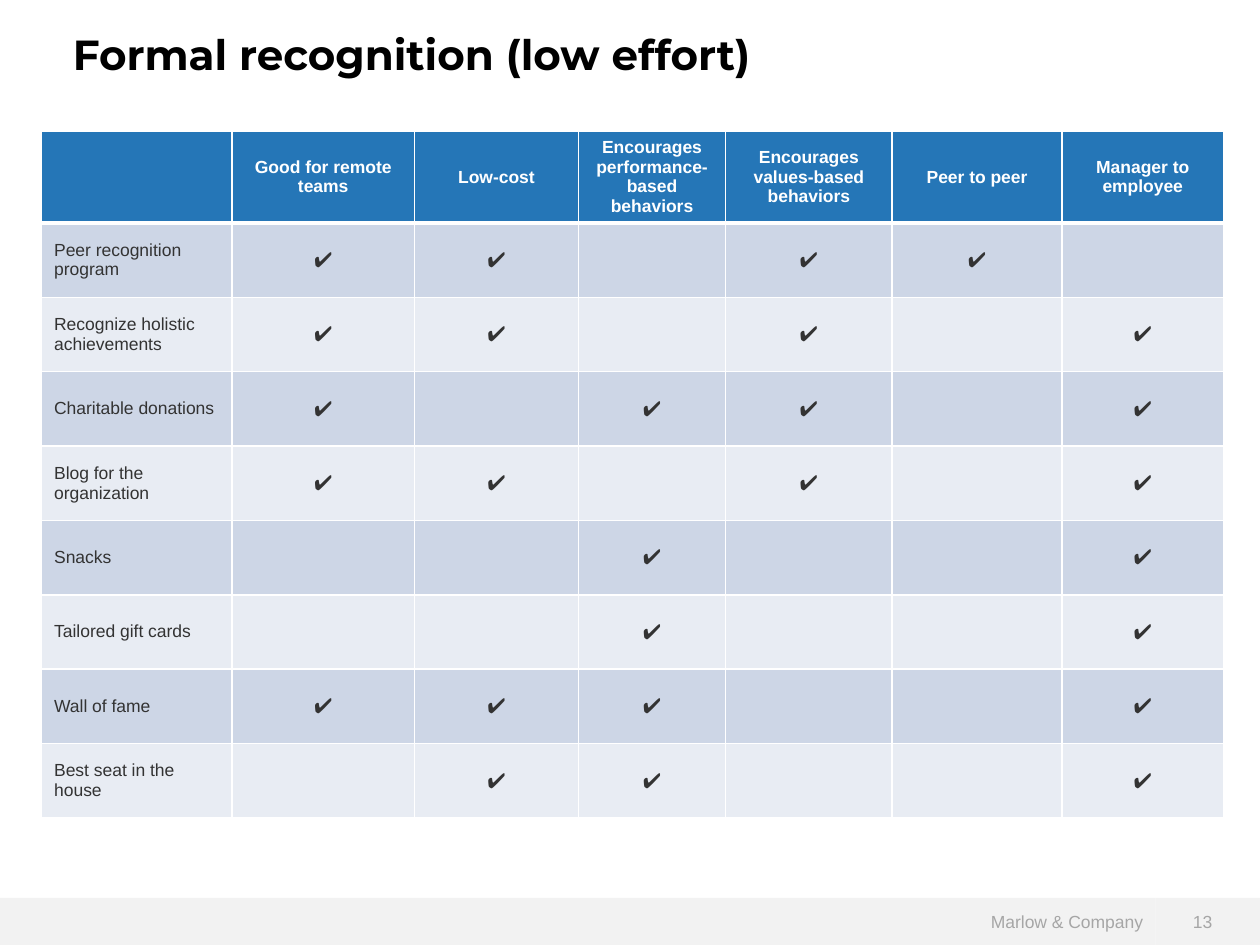
import dataclasses
import typing

import lxml.etree
import pptx
import pptx.dml.color
import pptx.enum.shapes
import pptx.enum.text
import pptx.oxml.ns
import pptx.util

ALIGN = pptx.enum.text.PP_ALIGN
ANCHOR = pptx.enum.text.MSO_ANCHOR
PAGE_WIDTH = pptx.util.Inches(10)
PAGE_HEIGHT = pptx.util.Inches(7.5)
COLUMN_PERCENTS = (15.1, 14.5, 13, 11.7, 13.2, 13.5, 12.8)
HEADER_PERCENT = 9.73
ROW_PERCENT = 7.87
HEADINGS = (
    "",
    "Good for remote teams",
    "Low-cost",
    "Encourages performance-based behaviors",
    "Encourages values-based behaviors",
    "Peer to peer",
    "Manager to employee",
)


@dataclasses.dataclass(frozen=True)
class Region:
    """A rectangle in percent of the page's width and height."""
    left: float
    top: float
    width: float
    height: float

    def lengths(self) -> tuple:
        return across(self.left), down(self.top), across(self.width), down(self.height)


@dataclasses.dataclass(frozen=True)
class Style:
    """The look of one span of text."""
    size: float
    color: str
    bold: bool = False
    font: str = "Arial"


@dataclasses.dataclass(frozen=True)
class Idea:
    """A form of recognition and the table columns it is ticked in."""
    name: str
    ticks: tuple


@dataclasses.dataclass(frozen=True)
class FooterPart:
    """One block of the footer band."""
    text: str
    region: Region
    align: typing.Any
    indent: float


IDEAS = (
    Idea("Peer recognition program", (1, 2, 4, 5)),
    Idea("Recognize holistic achievements", (1, 2, 4, 6)),
    Idea("Charitable donations", (1, 3, 4, 6)),
    Idea("Blog for the organization", (1, 2, 4, 6)),
    Idea("Snacks", (3, 6)),
    Idea("Tailored gift cards", (3, 6)),
    Idea("Wall of fame", (1, 2, 3, 6)),
    Idea("Best seat in the house", (2, 3, 6)),
)
FOOTER = (
    FooterPart("Marlow & Company", Region(0, 95, 91.7, 5), ALIGN.RIGHT, 0.29),
    FooterPart("13", Region(91.7, 95, 8.3, 5), ALIGN.LEFT, 0.2),
)
TITLE_STYLE = Style(24, "000000", True, "Montserrat")
FOOTER_STYLE = Style(10, "A6A6A6")
HEADING_STYLE = Style(10, "FFFFFF", True)
NAME_STYLE = Style(10, "333333")
TICK_STYLE = Style(12, "333333")


def across(percent: float) -> int:
    """Return a share of the page's width."""
    return round(PAGE_WIDTH * percent / 100)


def down(percent: float) -> int:
    """Return a share of the page's height."""
    return round(PAGE_HEIGHT * percent / 100)


def paint(target: typing.Any, color: str) -> None:
    """Give a fill a solid colour."""
    target.solid()
    target.fore_color.rgb = pptx.dml.color.RGBColor.from_string(color)


def write(para: typing.Any, text: str, style: Style, align: typing.Any = ALIGN.LEFT) -> None:
    """Add one styled span to a paragraph."""
    para.alignment = align
    span = para.add_run()
    span.text = text
    span.font.name = style.font
    span.font.size = pptx.util.Pt(style.size)
    span.font.bold = style.bold
    paint(span.font.fill, style.color)


def draw_title(page: typing.Any, text: str) -> None:
    """Draw the page title."""
    box = page.shapes.add_textbox(*Region(4.8, 2.4, 86.3, 8.13).lengths())
    box.text_frame.word_wrap = True
    write(box.text_frame.paragraphs[0], text, TITLE_STYLE)


def draw_footer(page: typing.Any, part: FooterPart) -> None:
    """Draw one block of the footer band."""
    box = page.shapes.add_shape(
        pptx.enum.shapes.MSO_SHAPE.RECTANGLE, *part.region.lengths())
    box.shadow.inherit = False
    box.line.fill.background()
    paint(box.fill, "F2F2F2")
    box.text_frame.word_wrap = True
    box.text_frame.vertical_anchor = ANCHOR.MIDDLE
    para = box.text_frame.paragraphs[0]
    properties = para._p.get_or_add_pPr()
    properties.set("marL", str(pptx.util.Inches(part.indent)))
    properties.set("indent", "0")
    write(para, part.text, FOOTER_STYLE, part.align)


def add_border(cell: typing.Any, side: str, points: float) -> None:
    """Give one side of a cell a white line."""
    qualified = pptx.oxml.ns.qn
    line = lxml.etree.SubElement(
        cell._tc.get_or_add_tcPr(), qualified(f"a:ln{side}"), w=str(pptx.util.Pt(points)))
    solid = lxml.etree.SubElement(line, qualified("a:solidFill"))
    lxml.etree.SubElement(solid, qualified("a:srgbClr"), val="FFFFFF")


def draw_cell(cell: typing.Any, row: int, text: str, style: Style, align: typing.Any) -> None:
    """Fill, rule and letter one table cell."""
    for side in "LRTB":
        header_edge = (row, side) in ((0, "B"), (1, "T"))
        add_border(cell, side, 3 if header_edge else 1)
    paint(cell.fill, "2576B7" if row == 0 else ("E8ECF3", "CDD6E6")[row % 2])
    cell.vertical_anchor = ANCHOR.MIDDLE
    if text:
        write(cell.text_frame.paragraphs[0], text, style, align)


def draw_table(page: typing.Any) -> None:
    """Draw the grid of ideas against their qualities."""
    height = HEADER_PERCENT + ROW_PERCENT * len(IDEAS)
    region = Region(3.3, 13.87, sum(COLUMN_PERCENTS), height)
    table = page.shapes.add_table(
        len(IDEAS) + 1, len(HEADINGS), *region.lengths()).table
    for column, percent in zip(table.columns, COLUMN_PERCENTS):
        column.width = across(percent)
    for index, row in enumerate(table.rows):
        row.height = down(ROW_PERCENT if index else HEADER_PERCENT)
    for column, heading in enumerate(HEADINGS):
        draw_cell(table.cell(0, column), 0, heading, HEADING_STYLE, ALIGN.CENTER)
    for row, idea in enumerate(IDEAS, start=1):
        draw_cell(table.cell(row, 0), row, idea.name, NAME_STYLE, ALIGN.LEFT)
        for column in range(1, len(HEADINGS)):
            mark = "✔" if column in idea.ticks else ""
            draw_cell(table.cell(row, column), row, mark, TICK_STYLE, ALIGN.CENTER)


def main() -> None:
    """Build and save the deck."""
    deck = pptx.Presentation()
    deck.slide_width = PAGE_WIDTH
    deck.slide_height = PAGE_HEIGHT
    page = deck.slides.add_slide(deck.slide_layouts[6])
    for part in FOOTER:
        draw_footer(page, part)
    draw_table(page)
    draw_title(page, "Formal recognition (low effort)")
    deck.save("out.pptx")


if __name__ == "__main__":
    main()
